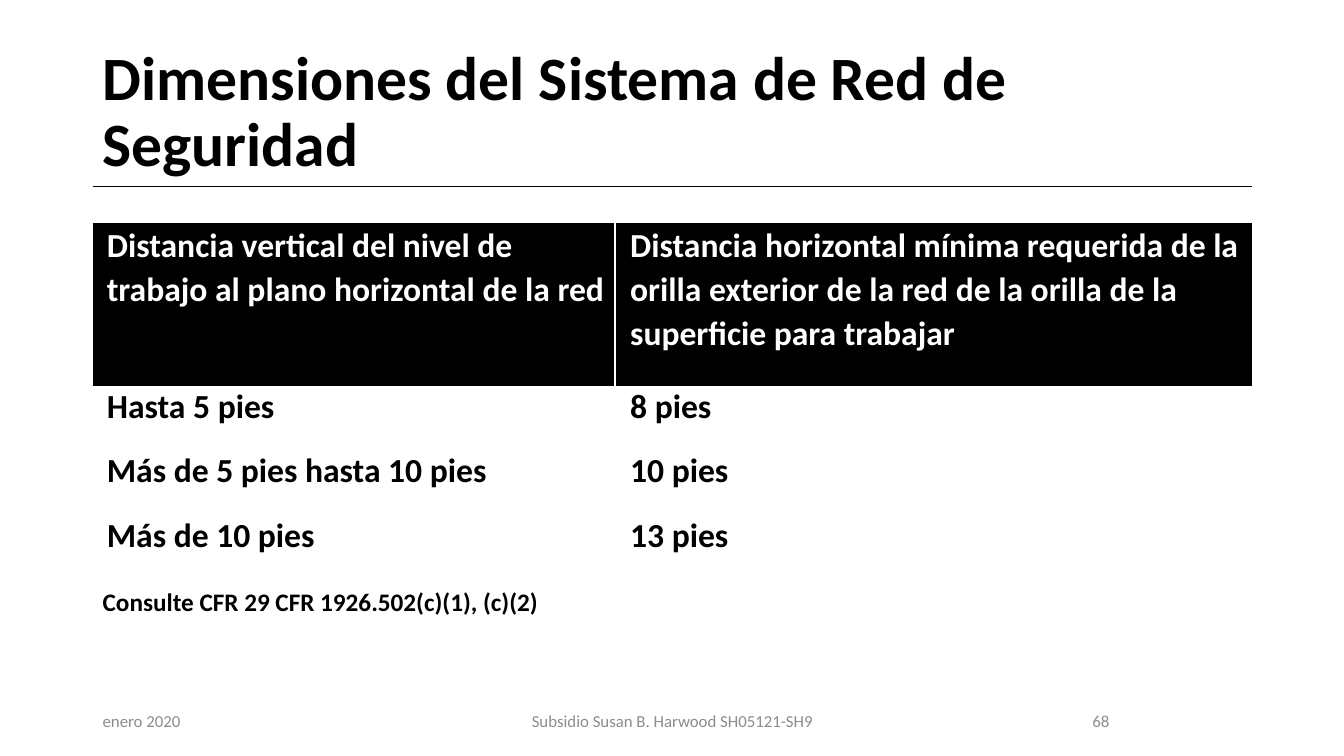
from lxml.etree import SubElement as add_element
from pptx import Presentation
from pptx.dml.color import RGBColor as Rgb
from pptx.enum.shapes import MSO_CONNECTOR as Connector
from pptx.enum.text import MSO_ANCHOR as Anchor, MSO_AUTO_SIZE as AutoSize, PP_ALIGN as Align
from pptx.oxml import parse_xml
from pptx.oxml.ns import nsdecls, qn
from pptx.util import Pt

PX = 9144
LEFT, WIDTH = 92, 1150
COLORS = {"ink": "000000", "paper": "FFFFFF", "muted": "8C8C8C"}
COLUMN_WIDTHS = (518, 632)
COLUMN_INSETS = (14, 15)
ROWS = (
    (164, 1.07, (
        "Distancia vertical del nivel de trabajo al plano horizontal de la red",
        "Distancia horizontal mínima requerida de la orilla exterior de la red "
        "de la orilla de la superficie para trabajar")),
    (62, 0.93, ("Hasta 5 pies", "8 pies")),
    (66, 1.0, ("Más de 5 pies hasta 10 pies", "10 pies")),
    (64, 0.92, ("Más de 10 pies", "13 pies")),
)
FOOTERS = (
    (92, 300, "enero 2020", Align.LEFT),
    (442, 450, "Subsidio Susan B. Harwood SH05121-SH9", Align.CENTER),
    (942, 300, "68", Align.CENTER),
)


def px(*lengths):
    """Turn pixel lengths into EMU."""
    return [length * PX for length in lengths]


def apply_format(target, values):
    """Set each named attribute on the target."""
    for attribute, value in values.items():
        setattr(target, attribute, value)


def write_text(frame, text, size, color, bold, paragraph_format):
    """Fill a text frame with one styled paragraph."""
    paragraph = frame.paragraphs[0]
    apply_format(paragraph, paragraph_format)
    run = paragraph.add_run()
    run.text = text
    apply_format(run.font, {"name": "Calibri", "size": Pt(size), "bold": bold})
    run.font.color.rgb = Rgb.from_string(COLORS[color])


def add_label(slide, box, text, size, color="ink", bold=True,
              frame_format=None, **paragraph_format):
    """Add a wrapped text box."""
    frame = slide.shapes.add_textbox(*px(*box)).text_frame
    apply_format(frame, {"word_wrap": True, "vertical_anchor": Anchor.MIDDLE,
                         **(frame_format or {})})
    write_text(frame, text, size, color, bold, paragraph_format)


def add_rule(slide, top):
    """Draw the thin line under the title."""
    rule = slide.shapes.add_connector(
        Connector.STRAIGHT, *px(LEFT, top, LEFT + WIDTH, top))
    rule.line.width = Pt(0.5)
    rule.line.color.rgb = Rgb.from_string(COLORS["ink"])
    add_element(rule._element.spPr, qn("a:effectLst"))


def set_borders(cell, bottom_width):
    """Give a cell white borders on all four sides."""
    properties = cell._tc.get_or_add_tcPr()
    widths = {"lnL": 1, "lnR": 1, "lnT": 1, "lnB": bottom_width}
    for position, (side, width) in enumerate(widths.items()):
        properties.insert(position, parse_xml(
            f'<a:{side} {nsdecls("a")} w="{Pt(width)}"><a:solidFill>'
            f'<a:srgbClr val="{COLORS["paper"]}"/></a:solidFill></a:{side}>'))


def add_distance_table(slide, top):
    """Add the table of vertical and horizontal distances."""
    height = sum(row[0] for row in ROWS)
    table = slide.shapes.add_table(
        len(ROWS), len(COLUMN_WIDTHS), *px(LEFT, top, WIDTH, height)).table
    for column, width in zip(table.columns, COLUMN_WIDTHS):
        column.width = width * PX
    for row_index, (row_height, spacing, texts) in enumerate(ROWS):
        table.rows[row_index].height = row_height * PX
        is_header = row_index == 0
        fill, ink = ("ink", "paper") if is_header else ("paper", "ink")
        for column_index, (text, inset) in enumerate(zip(texts, COLUMN_INSETS)):
            cell = table.cell(row_index, column_index)
            apply_format(cell, {"margin_left": inset * PX, "margin_right": 7 * PX,
                                "margin_top": 0, "margin_bottom": 0})
            cell.fill.solid()
            cell.fill.fore_color.rgb = Rgb.from_string(COLORS[fill])
            set_borders(cell, 3 if is_header else 1)
            write_text(cell.text_frame, text, 24, ink, True,
                       {"line_spacing": spacing, "space_after": Pt(6)})


def main():
    """Build and save the slide."""
    deck = Presentation()
    apply_format(deck, dict(zip(("slide_width", "slide_height"), px(1333, 750))))
    slide = deck.slides.add_slide(deck.slide_layouts[6])
    add_rule(slide, 185)
    add_label(slide, (LEFT, 40, WIDTH, 145),
              "Dimensiones del Sistema de Red de Seguridad", 44, line_spacing=0.9)
    add_distance_table(slide, 221)
    for left, width, text, alignment in FOOTERS:
        add_label(slide, (left, 695, width, 40), text, 12, "muted", False,
                  alignment=alignment)
    add_label(slide, (LEFT, 577, WIDTH, 40),
              "Consulte CFR 29 CFR 1926.502(c)(1), (c)(2)", 18,
              frame_format={"vertical_anchor": Anchor.TOP,
                            "auto_size": AutoSize.SHAPE_TO_FIT_TEXT})
    deck.save("out.pptx")


if __name__ == "__main__":
    main()
